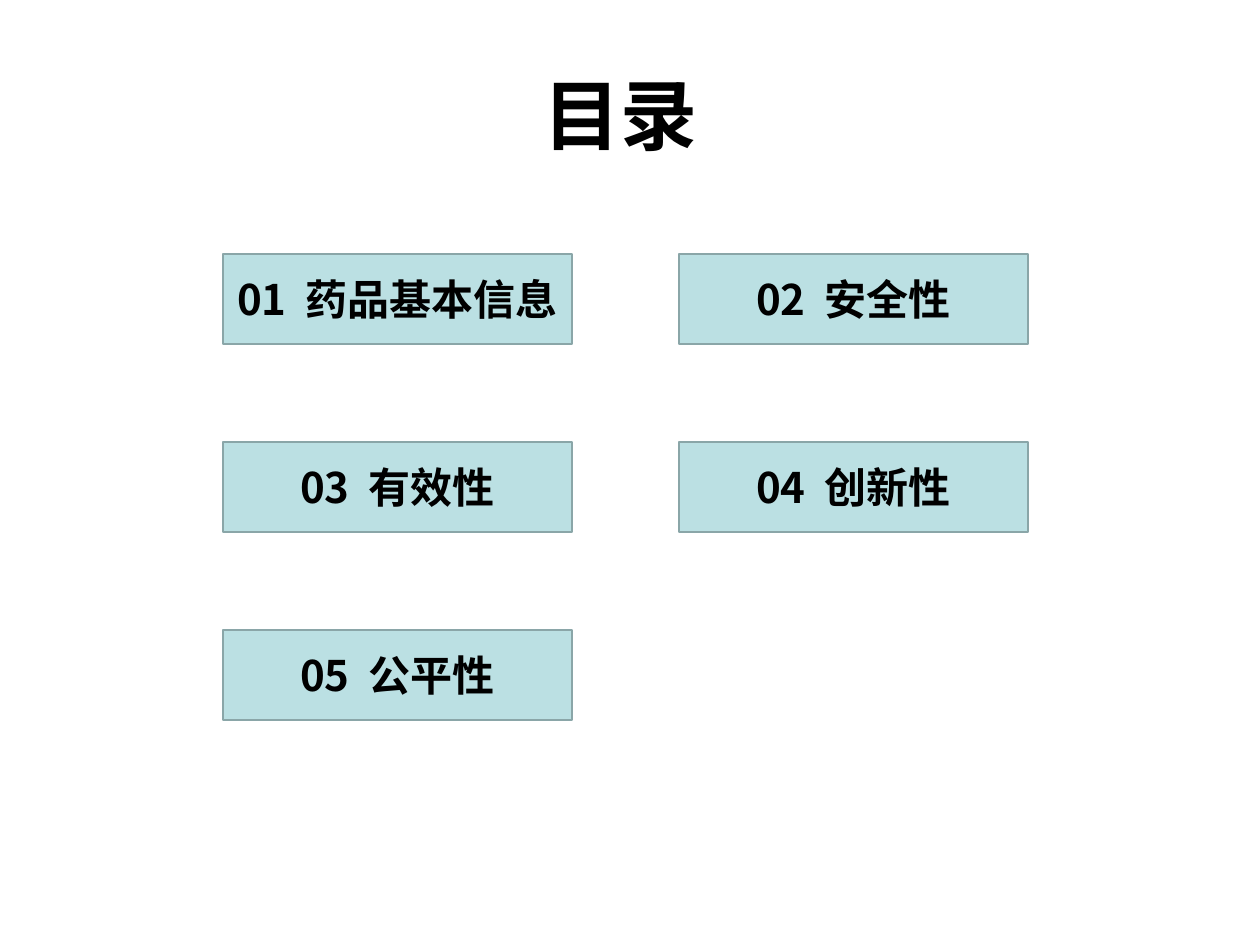
from lxml.etree import SubElement
from pptx import Presentation
from pptx.dml.color import RGBColor
from pptx.enum.shapes import MSO_SHAPE as SHAPE
from pptx.enum.text import MSO_ANCHOR as ANCHOR, PP_ALIGN as ALIGN
from pptx.oxml.ns import qn
from pptx.util import Pt

PX = 914400 // 126  # one px in EMU
BLACK = RGBColor(0x00, 0x00, 0x00)
TEAL = RGBColor(0xBB, 0xE0, 0xE3)
EDGE = RGBColor(0x8A, 0xA6, 0xA8)
FONT = "Noto Sans CJK SC"


def place(sp, *box):
    for name, px in zip(("left", "top", "width", "height"), box):
        setattr(sp, name, px * PX)


def write(sp, texts, size):
    """Write centred bold runs, with the font set for Latin and Chinese."""
    tf = sp.text_frame
    tf.vertical_anchor = ANCHOR.MIDDLE
    p = tf.paragraphs[0]
    p.alignment = ALIGN.CENTER
    for text in texts:
        r = p.add_run()
        r.text = text
        r.font.color.rgb = BLACK
        for name, value in {"name": FONT, "size": Pt(size), "bold": True}.items():
            setattr(r.font, name, value)
        rPr = r.font._element
        SubElement(rPr, qn("a:ea"), typeface=FONT)
        if text == " ":
            rPr.set("spc", "550")  # widen the gap after the number


prs = Presentation()
prs.slide_width, prs.slide_height = 1260 * PX, 945 * PX
s = prs.slides.add_slide(prs.slide_layouts[5])

# Title
place(s.shapes.title, 54, 35, 1134, 158)
write(s.shapes.title, ["目录"], 44)

# Numbered sections, two per row
sections = ["药品基本信息", "安全性", "有效性", "创新性", "公平性"]
for i, section in enumerate(sections):
    row, col = divmod(i, 2)
    sp = s.shapes.add_shape(SHAPE.RECTANGLE, 0, 0, 0, 0)
    place(sp, 223 + col * 456, 254 + row * 188, 349, 90)
    sp.shadow.inherit = False
    sp.fill.solid()
    sp.fill.fore_color.rgb = TEAL
    sp.line.color.rgb = EDGE
    sp.line.width = Pt(1)
    sp.text_frame.word_wrap = False
    write(sp, [f"{i + 1:02}", " ", section], 24)

prs.save("out.pptx")
